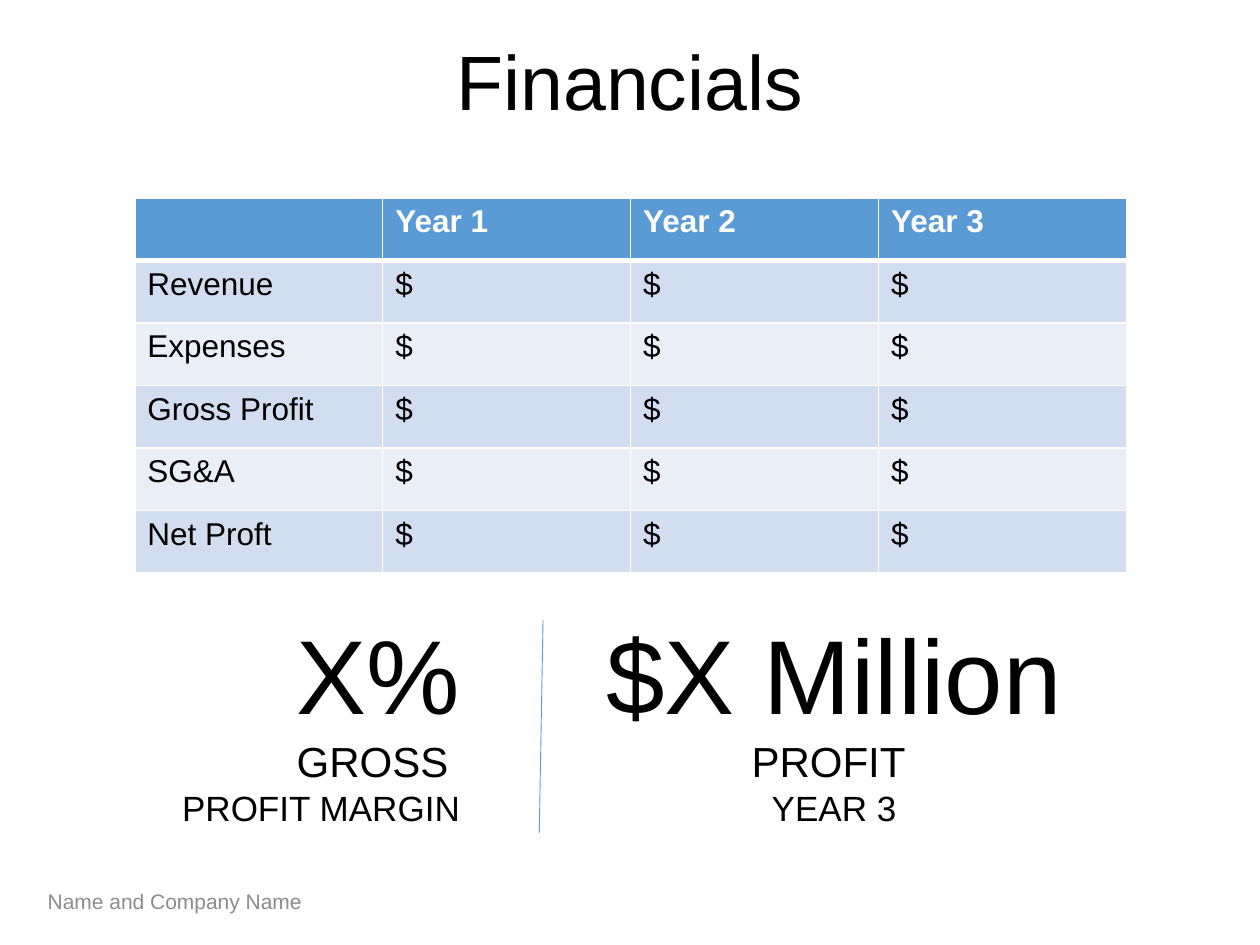
from lxml.etree import SubElement
from pptx import Presentation
from pptx.dml.color import RGBColor
from pptx.enum.shapes import MSO_CONNECTOR as Connector
from pptx.enum.text import MSO_ANCHOR as Anchor, PP_ALIGN as Align
from pptx.oxml.ns import qn
from pptx.util import Inches, Pt

COLORS = {"header": "5B9BD5", "band": "D2DEEF", "light": "EAEFF7",
          "white": "FFFFFF", "black": "000000", "gray": "8C8C8C"}
FONT = "Arial"

TITLE = "Financials"
FOOTER = "Name and Company Name"
YEARS = ["Year 1", "Year 2", "Year 3"]
ITEMS = ["Revenue", "Expenses", "Gross Profit", "SG&A", "Net Proft"]
TABLE_AREA = (1.07, 1.57, 7.87, 2.98)
HIGHLIGHTS = [
    ((0.71, 4.79, 3.04, 1.85), Align.RIGHT, ["X%", "GROSS ", "PROFIT MARGIN"]),
    ((4.29, 4.79, 4.66, 1.85), Align.CENTER, ["$X Million", "PROFIT ", "YEAR 3"]),
]
HIGHLIGHT_SIZES = [60, 24, 20]
DIVIDER = (4.31, 4.92, 4.28, 6.61)


def color(name):
    return RGBColor.from_string(COLORS[name])


def write(para, text, size, ink="black", bold=False, align=Align.LEFT):
    para.alignment = align
    span = para.add_run()
    span.text = text
    for key, value in {"name": FONT, "size": Pt(size), "bold": bold}.items():
        setattr(span.font, key, value)
    span.font.color.rgb = color(ink)


def add_text(page, area, lines, sizes, **style):
    box = page.shapes.add_textbox(*map(Inches, area))
    frame = box.text_frame
    frame.word_wrap = True
    for index, (line, size) in enumerate(zip(lines, sizes)):
        para = frame.add_paragraph() if index else frame.paragraphs[0]
        write(para, line, size, **style)
    return frame


def add_borders(cell, widths):
    props = cell._tc.get_or_add_tcPr()
    for side, width in widths.items():
        line = SubElement(props, qn(f"a:ln{side}"), w=str(Pt(width)))
        fill = SubElement(line, qn("a:solidFill"))
        SubElement(fill, qn("a:srgbClr"), val=COLORS["white"])


def add_financials(page):
    rows = [["", *YEARS]] + [[item] + ["$"] * len(YEARS) for item in ITEMS]
    table = page.shapes.add_table(
        len(rows), len(rows[0]), *map(Inches, TABLE_AREA)).table
    for r, row in enumerate(rows):
        is_header = r == 0
        fill = "header" if is_header else "band" if r % 2 else "light"
        widths = {"L": 1, "R": 1, "T": 3 if r == 1 else 1, "B": 3 if is_header else 1}
        for c, text in enumerate(row):
            cell = table.cell(r, c)
            add_borders(cell, widths)
            cell.fill.solid()
            cell.fill.fore_color.rgb = color(fill)
            if text:
                write(cell.text_frame.paragraphs[0], text, 18,
                      "white" if is_header else "black", is_header)


def add_divider(page):
    line = page.shapes.add_connector(Connector.STRAIGHT, *map(Inches, DIVIDER))
    line.line.color.rgb = color("header")
    line.line.width = Pt(0.5)
    SubElement(line._element.spPr, qn("a:effectLst"))


def main():
    deck = Presentation()
    deck.slide_width, deck.slide_height = Inches(10), Inches(7.5)
    page = deck.slides.add_slide(deck.slide_layouts[5])

    title = page.shapes.title
    area = {"left": 0.69, "top": 0.03, "width": 8.62, "height": 1.3}
    for key, value in area.items():
        setattr(title, key, Inches(value))
    title.text_frame.vertical_anchor = Anchor.MIDDLE
    heading = title.text_frame.paragraphs[0]
    heading.line_spacing = 0.9
    write(heading, TITLE, 44, align=Align.CENTER)

    footer = add_text(page, (0.28, 6.95, 8.22, 0.4), [FOOTER], [12], ink="gray")
    footer.vertical_anchor = Anchor.MIDDLE
    add_financials(page)
    add_divider(page)
    for area, align, lines in HIGHLIGHTS:
        add_text(page, area, lines, HIGHLIGHT_SIZES, align=align)
    deck.save("out.pptx")


if __name__ == "__main__":
    main()
